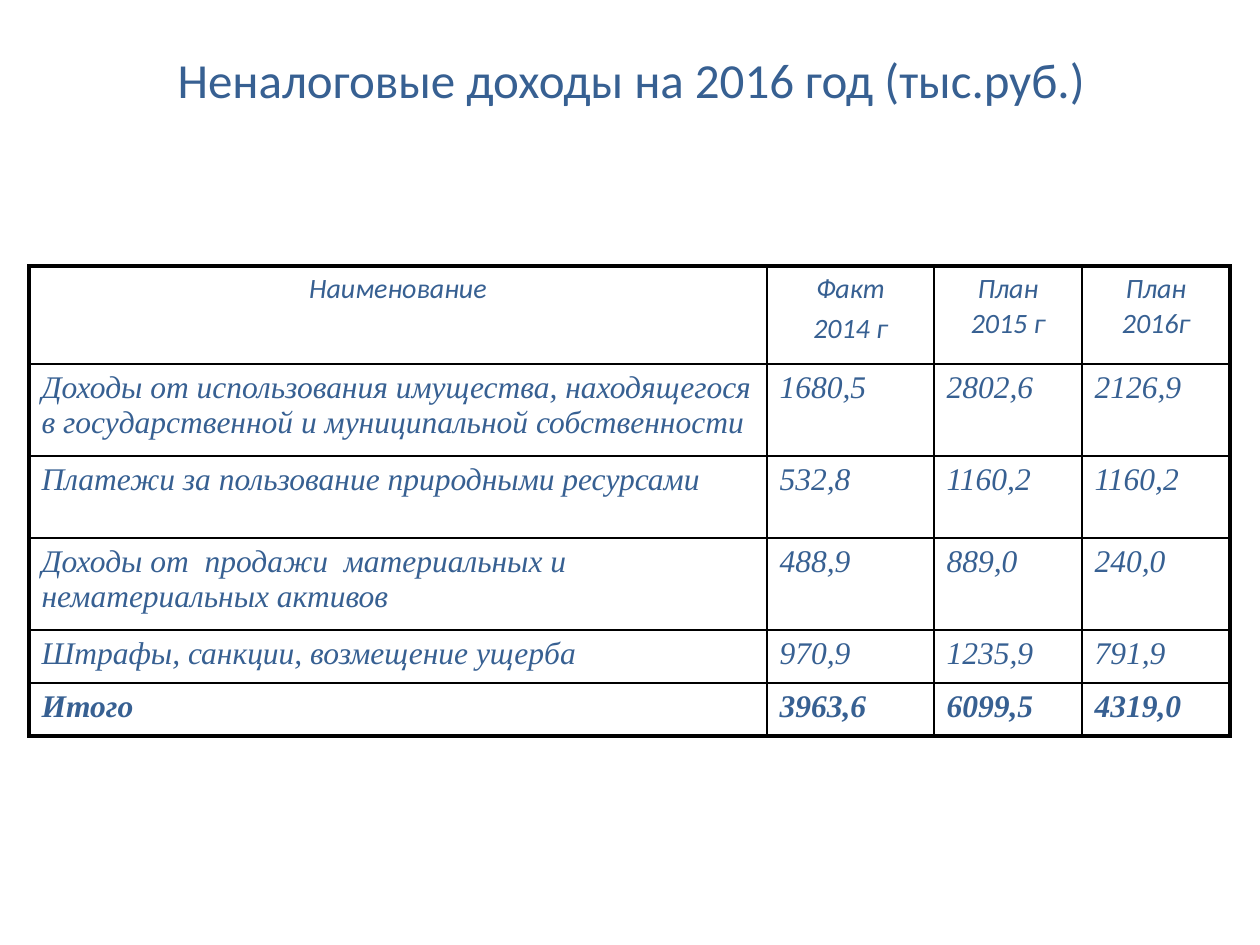
from lxml import etree
from pptx import Presentation, util as u
from pptx.dml.color import RGBColor
from pptx.enum import text
from pptx.oxml import ns

PX = 914400 / 126
INK, LINE = "376092", "000000"
THIN, THICK = 1, 2.25

HEADER = [["Наименование"], ["Факт", "2014 г"], ["План 2015 г"], ["План 2016г"]]
ROWS = [
    ["Доходы от использования имущества, находящегося в государственной "
     "и муниципальной собственности", "1680,5", "2802,6", "2126,9"],
    ["Платежи за пользование природными ресурсами", "532,8", "1160,2", "1160,2"],
    ["Доходы от  продажи  материальных и нематериальных активов",
     "488,9", "889,0", "240,0"],
    ["Штрафы, санкции, возмещение ущерба", "970,9", "1235,9", "791,9"],
    ["Итого", "3963,6", "6099,5", "4319,0"],
]
COLUMN_WIDTHS = [738, 167, 148, 148]
ROW_HEIGHTS = [98, 92, 82, 92, 53, 53]


def px(length):
    return u.Emu(round(length * PX))


def color(value):
    return RGBColor.from_string(value)


class SlideBuilder:
    """Holds the text style and the current slide."""

    def __init__(self, deck):
        self.ink = INK
        self.page = deck.slides.add_slide(deck.slide_layouts[5])

    def add_run(self, para, words, size, font, bold=False, italic=False):
        span = para.add_run()
        span.text = words
        span.font.size = u.Pt(size)
        span.font.name = font
        span.font.bold = bold
        span.font.italic = italic
        span.font.color.rgb = color(self.ink)

    def title(self, words, left, top, width, height):
        box = self.page.shapes.title
        box.left, box.top, box.width, box.height = map(px, (left, top, width, height))
        box.text_frame.vertical_anchor = text.MSO_ANCHOR.MIDDLE
        para = box.text_frame.paragraphs[0]
        para.alignment = text.PP_ALIGN.CENTER
        self.add_run(para, words, 28, "Calibri")

    def table(self, header, rows, left, top, widths, heights):
        frame = self.page.shapes.add_table(
            len(heights), len(widths), px(left), px(top),
            px(sum(widths)), px(sum(heights)))
        table = frame.table
        table.first_row = table.horz_banding = False
        for column, width in zip(table.columns, widths):
            column.width = px(width)
        for row, height in zip(table.rows, heights):
            row.height = px(height)

        last_row, last_column = len(heights) - 1, len(widths) - 1
        body = [[[words] for words in row] for row in rows]
        for r, row in enumerate([header] + body):
            for c, lines in enumerate(row):
                cell = table.cell(r, c)
                self.cell_text(cell, lines, r == 0, r == last_row)
                cell.fill.background()
                self.borders(cell, L=c == 0, R=c == last_column,
                             T=r == 0, B=r == last_row)

    def cell_text(self, cell, lines, is_header, is_total):
        size, font = (16, "Calibri") if is_header else (18, "Times New Roman")
        frame = cell.text_frame
        for i, words in enumerate(lines):
            para = frame.add_paragraph() if i else frame.paragraphs[0]
            para.alignment = (text.PP_ALIGN.CENTER if is_header
                              else text.PP_ALIGN.LEFT)
            para.space_before = u.Pt(size * 0.2)
            self.add_run(para, words, size, font, bold=is_total, italic=True)

    def borders(self, cell, **outer_sides):
        """Draw thick lines on outer sides, thin ones elsewhere."""
        properties = cell._tc.get_or_add_tcPr()
        for i, (side, is_outer) in enumerate(outer_sides.items()):
            line = etree.Element(ns.qn("a:ln" + side))
            line.set("w", str(u.Pt(THICK if is_outer else THIN)))
            fill = etree.SubElement(line, ns.qn("a:solidFill"))
            etree.SubElement(fill, ns.qn("a:srgbClr")).set("val", LINE)
            properties.insert(i, line)


def main():
    deck = Presentation()
    deck.slide_width, deck.slide_height = px(1260), px(945)
    slide = SlideBuilder(deck)
    slide.title("Неналоговые доходы на 2016 год (тыс.руб.)", 64, 0, 1134, 158)
    slide.table(HEADER, ROWS, 29, 266, COLUMN_WIDTHS, ROW_HEIGHTS)
    deck.save("out.pptx")


if __name__ == "__main__":
    main()
